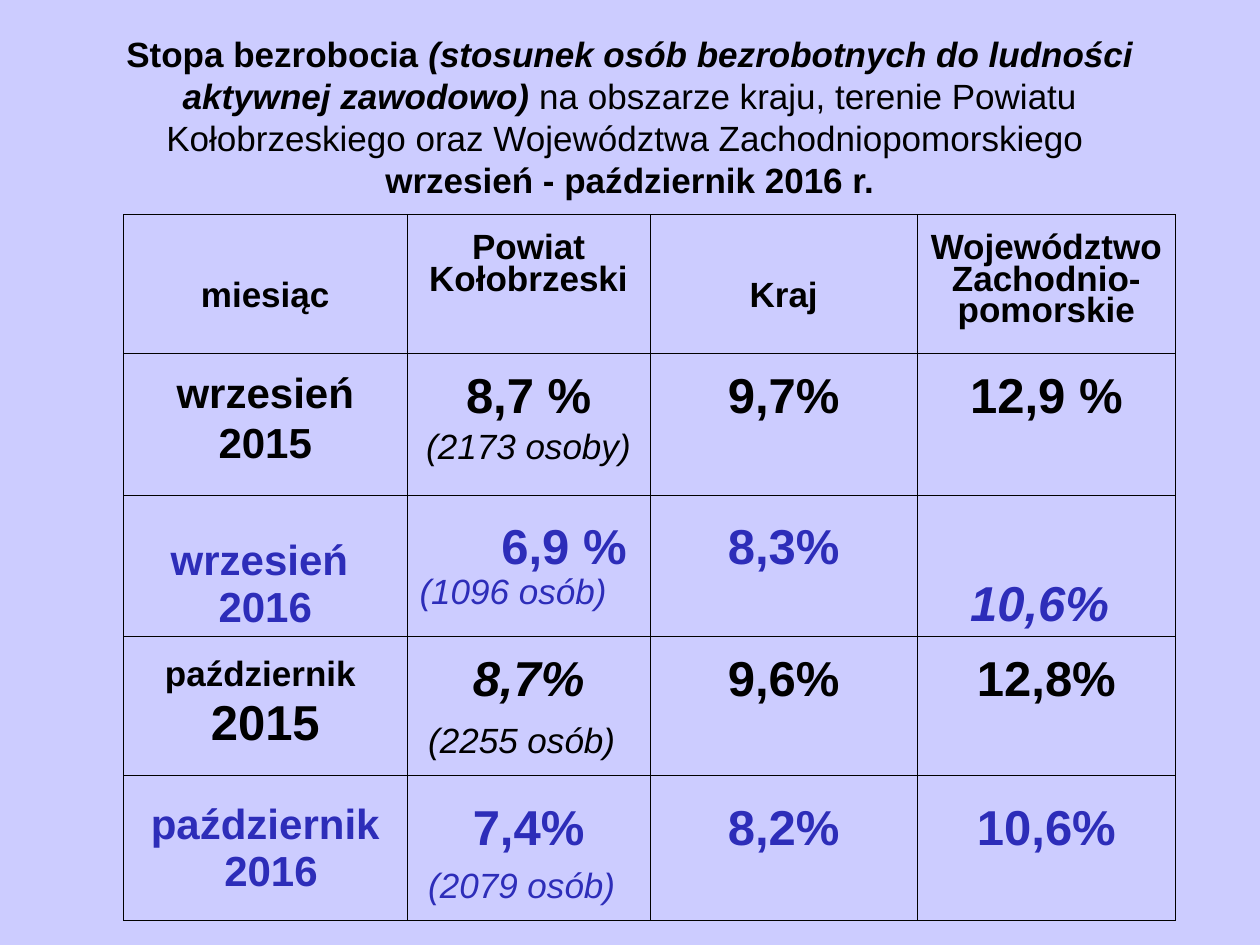
from lxml import etree
from pptx import Presentation, util as u
from pptx.dml.color import RGBColor
from pptx.enum import text as t
from pptx.oxml.ns import qn

FONT = "Arial"
BLACK, BLUE, LILAC = "000000", "2D2DB9", "CCCCFF"
OUTER, INNER = 0.23, 0.11  # border widths in points
TOP, MIDDLE, BOTTOM = (t.MSO_ANCHOR.TOP, t.MSO_ANCHOR.MIDDLE,
                       t.MSO_ANCHOR.BOTTOM)


def colour(code):
    return RGBColor.from_string(code)


def span(text, **style):
    """A piece of text with its format: size, bold, italic."""
    return text, {"size": 28, "bold": True, "italic": False, **style}


def count(text):
    """The number of people, under the rate."""
    return span(text, size=20, bold=False, italic=True)


def cell(*paras, **style):
    """Paragraphs, each a list of spans, with changes to the row's style."""
    return paras, style


class Builder:
    def __init__(self, deck, background):
        self.font = FONT
        self.page = deck.slides.add_slide(deck.slide_layouts[6])
        fill = self.page.background.fill
        fill.solid()
        fill.fore_color.rgb = colour(background)

    def para(self, para, spans, ink=BLACK, align=t.PP_ALIGN.CENTER,
             line=1.0, before=0):
        para.alignment = align
        para.line_spacing = line
        para.space_before = u.Pt(before)
        for content, style in spans:
            if content == "\n":
                para.add_line_break()
                continue
            run = para.add_run()
            run.text = content
            run.font.name = self.font
            run.font.size = u.Pt(style["size"])
            run.font.bold = style["bold"]
            run.font.italic = style["italic"]
            run.font.color.rgb = colour(ink)

    def title(self, left, top, width, height, spans):
        box = self.page.shapes.add_textbox(
            u.Inches(left), u.Inches(top), u.Inches(width), u.Inches(height))
        frame = box.text_frame
        frame.word_wrap = True
        frame.vertical_anchor = MIDDLE
        self.para(frame.paragraphs[0], spans)

    def borders(self, target, widths):
        props = target._tc.get_or_add_tcPr()
        for index, (side, width) in enumerate(zip("LRTB", widths)):
            line = etree.Element(qn("a:ln" + side), w=str(int(u.Pt(width))))
            fill = etree.SubElement(line, qn("a:solidFill"))
            etree.SubElement(fill, qn("a:srgbClr"), val=BLACK)
            props.insert(index, line)

    def fill_cell(self, target, paras, inset, anchor=TOP, indent=0, **style):
        target.fill.background()
        target.margin_left = target.margin_right = u.Inches(0.1)
        target.margin_top, target.margin_bottom = u.Inches(inset), u.Inches(0.05)
        target.vertical_anchor = anchor
        frame = target.text_frame
        for index, spans in enumerate(paras):
            para = frame.add_paragraph() if index else frame.paragraphs[0]
            self.para(para, spans, **style)
        if indent:
            frame.paragraphs[0]._p.get_or_add_pPr().set(
                "marL", str(int(u.Inches(indent))))

    def table(self, left, top, widths, heights, rows):
        frame = self.page.shapes.add_table(
            len(heights), len(widths), u.Inches(left), u.Inches(top),
            u.Inches(sum(widths)), u.Inches(sum(heights)))
        table = frame.table
        table.first_row = table.horz_banding = False
        for column, width in zip(table.columns, widths):
            column.width = u.Inches(width)
        for row, height in zip(table.rows, heights):
            row.height = u.Inches(height)
        last_row, last_column = len(heights) - 1, len(widths) - 1
        for y, (row_style, cells) in enumerate(rows):
            for x, (paras, changes) in enumerate(cells):
                target = table.cell(y, x)
                self.fill_cell(target, paras, **{**row_style, **changes})
                edges = (x == 0, x == last_column, y == 0, y == last_row)
                self.borders(target, [OUTER if edge else INNER for edge in edges])


def main():
    deck = Presentation()
    deck.slide_width, deck.slide_height = u.Inches(10), u.Inches(7.5)
    builder = Builder(deck, LILAC)

    # Title
    builder.title(0.5, 0.3, 9, 1.25, [
        span("Stopa bezrobocia ", size=20),
        span("(stosunek osób bezrobotnych do ludności aktywnej zawodowo)",
             size=20, italic=True),
        span(" na obszarze kraju, terenie Powiatu Kołobrzeskiego oraz "
             "Województwa Zachodniopomorskiego ", size=20, bold=False),
        span("\n"),
        span("wrzesień - październik 2016 r.", size=20)])

    # Row styles
    header = {"inset": 0.16, "line": 0.81, "before": 5}
    earlier = {"inset": 0.2, "line": 0.81, "before": 7}
    later = {"inset": 0.29, "line": 0.76, "before": 7, "ink": BLUE}
    tight = {"inset": 0.22, "line": 0.95, "before": 0}
    lowered = {"inset": 0.54}

    # Unemployment rates
    rows = [
        (header, [
            cell([span("miesiąc", size=20)], **lowered),
            cell([span("Powiat Kołobrzeski", size=20)]),
            cell([span("Kraj", size=20)], **lowered),
            cell([span("Województwo Zachodnio-pomorskie", size=20)])]),
        (earlier, [
            cell([span("wrzesień", size=24)], [span("2015", size=24)]),
            cell([span("8,7 %")], [count("(2173 osoby)")]),
            cell([span("9,7%")]),
            cell([span("12,9 %")])]),
        (later, [
            cell([span("wrzesień ", size=24)], [span("2016", size=24)],
                 anchor=BOTTOM),
            cell([span("6,9 %")], [count("(1096 osób)")],
                 align=t.PP_ALIGN.LEFT, indent=0.65, **tight),
            cell([span("8,3%")], **tight),
            cell([span("10,6% ", italic=True)], anchor=BOTTOM)]),
        (earlier, [
            cell([span("październik ", size=20)], [span("2015")]),
            cell([span("8,7%", italic=True)], [count("(2255 osób)"), span(" ")]),
            cell([span("9,6%")]),
            cell([span("12,8%")])]),
        (later, [
            cell([span("październik", size=24)], [span(" 2016", size=24)],
                 inset=0.28),
            cell([span("7,4%")], [count("(2079 osób)"), span(" ")]),
            cell([span("8,2%")]),
            cell([span("10,6%")])]),
    ]
    builder.table(0.98, 1.7, [2.25, 1.93, 2.12, 2.05],
                  [1.1, 1.13, 1.12, 1.05, 1.1], rows)

    deck.save("out.pptx")


if __name__ == "__main__":
    main()
